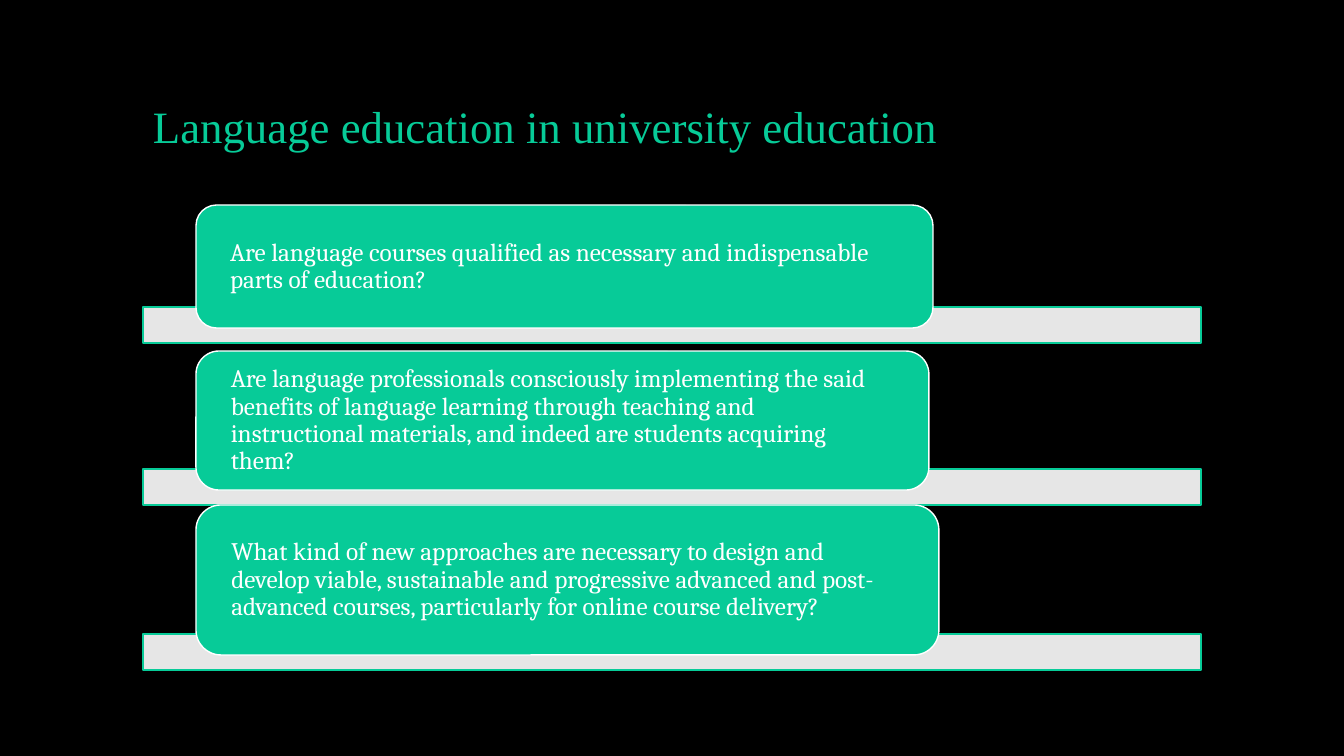
from lxml import etree
from pptx import Presentation
from pptx.dml.color import RGBColor
from pptx.enum.shapes import MSO_SHAPE
from pptx.enum.text import MSO_ANCHOR, PP_ALIGN
from pptx.oxml.ns import qn
from pptx.util import Pt

RECT, ROUNDED = MSO_SHAPE.RECTANGLE, MSO_SHAPE.ROUNDED_RECTANGLE
MIDDLE, BOTTOM = MSO_ANCHOR.MIDDLE, MSO_ANCHOR.BOTTOM
LEFT = PP_ALIGN.LEFT
PX = 914400 / 100.8
COLORS = {"background": "000000", "green": "07CB98", "white": "FFFFFF"}


def add_box(kind, x, y, w, h, fill, line):
    box = slide.shapes.add_shape(kind, *(round(v * PX) for v in (x, y, w, h)))
    box.shadow.inherit = False
    box.fill.solid()
    box.fill.fore_color.rgb = RGBColor.from_string(COLORS[fill])
    box.line.color.rgb = RGBColor.from_string(COLORS[line])
    box.line.width = Pt(1)
    return box


def write(box, text, font, size, color, anchor, inset_x, inset_y):
    frame = box.text_frame
    frame.word_wrap = True
    frame.vertical_anchor = anchor
    frame.margin_left = frame.margin_right = round(inset_x * PX)
    frame.margin_top = frame.margin_bottom = round(inset_y * PX)
    paragraph = frame.paragraphs[0]
    paragraph.alignment = LEFT
    paragraph.line_spacing = 0.9
    run = paragraph.add_run()
    run.text = text
    run.font.name = font
    run.font.size = Pt(size)
    run.font.color.rgb = RGBColor.from_string(COLORS[color])


deck = Presentation()
deck.slide_width, deck.slide_height = round(1344 * PX), round(756 * PX)
slide = deck.slides.add_slide(deck.slide_layouts[6])
slide.background.fill.solid()
slide.background.fill.fore_color.rgb = RGBColor.from_string(COLORS["background"])

BAR_X, BAR_W, BAR_H = 143, 1058, 36
CARD_X, CARD_OVERLAP = 196, 21

title = slide.shapes.add_textbox(*(round(v * PX) for v in (BAR_X, 40, BAR_W, 118)))
write(title, "Language education in university education",
      "Times New Roman", 32, "green", BOTTOM, 10, 5)

questions = [
    (205, 737, 123, "Are language courses qualified as necessary and indispensable "
     "parts of education?"),
    (351, 733, 139, "Are language professionals consciously implementing the said "
     "benefits of language learning through teaching and instructional materials, "
     "and indeed are students acquiring them?"),
    (505, 743, 150, "What kind of new approaches are necessary to design and develop "
     "viable, sustainable and progressive advanced and post-advanced courses, "
     "particularly for online course delivery?"),
]

for top, width, height, question in questions:
    bar_top = top + height - CARD_OVERLAP
    bar = add_box(RECT, BAR_X, bar_top, BAR_W, BAR_H, "white", "green")
    bar_color = bar.fill._xPr.find(qn("a:solidFill"))[0]
    etree.SubElement(bar_color, qn("a:alpha")).set("val", "90000")
    card = add_box(ROUNDED, CARD_X, top, width, height, "green", "white")
    write(card, question, "Cambria", 18, "white", MIDDLE, 28, 0)

deck.save("out.pptx")
